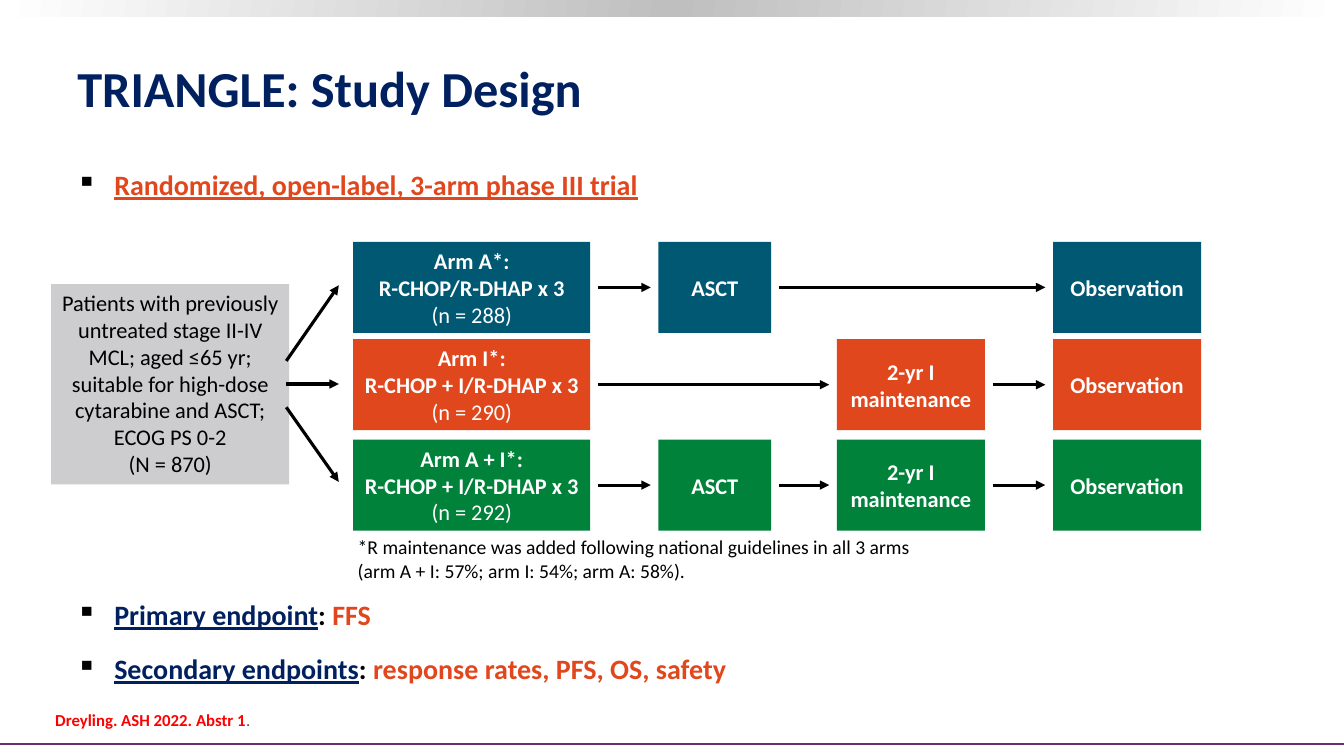
from copy import deepcopy
from pptx import Presentation
from pptx.util import Pt
from pptx.dml.color import RGBColor
from pptx.enum.shapes import MSO_SHAPE as Shape, MSO_CONNECTOR as Connector
from pptx.enum.text import MSO_ANCHOR as Anchor, PP_ALIGN as Align
from pptx.oxml.ns import qn
from lxml import etree


class Theme:
    font = "Calibri"
    navy, orange, teal, green = "002060", "E1471D", "015873", "00823B"
    black, white, gray, silver = "000000", "FFFFFF", "CDCDCF", "BFBFBF"
    red, slate, purple = "FF0000", "455560", "682E74"
    title, bullet, box, note, citation = 36, 20, 16, 14, 12


# Content: a run is (text, colour, style), style holding b (bold) and u (underline)
WIDTH, HEIGHT = 960, 540
TITLE = [[("TRIANGLE: Study Design", Theme.navy, "b")]]
TRIAL = [[("Randomized, open-label, 3-arm phase III trial", Theme.orange, "bu")]]
ENDPOINTS = [
    [(name, Theme.navy, "bu"), (": ", Theme.black, "b"), (value, Theme.orange, "b")]
    for name, value in [("Primary endpoint", "FFS"),
                        ("Secondary endpoints", "response rates, PFS, OS, safety")]
]
PATIENTS = [
    [("Patients with previously untreated stage II-IV MCL; aged ≤65 yr; suitable for "
      "high-dose cytarabine and ASCT; ECOG PS 0-2", Theme.black, "")],
    [("(N = 870)", Theme.black, "")],
]
FOOTNOTE = [[("*R maintenance was added following national guidelines in all 3 arms "
              "(arm A + I: 57%; arm I: 54%; arm A: 58%).", Theme.black, "")]]
CITATION = [[("Dreyling. ASH 2022. Abstr 1", Theme.red, "b"), (".", Theme.slate, "")]]

STEPS = {"ASCT": ["ASCT"], "Maintenance": ["2-yr I", "maintenance"],
         "Observation": ["Observation"]}
# Arm: top, colour, name, treatment, patients, later steps
ARMS = [
    (172.8, Theme.teal, "Arm A*:", "R-CHOP/R-DHAP x 3", "(n = 288)",
     ["ASCT", "Observation"]),
    (242.3, Theme.orange, "Arm I*:", "R-CHOP + I/R-DHAP x 3", "(n = 290)",
     ["Maintenance", "Observation"]),
    (314, Theme.green, "Arm A + I*:", "R-CHOP + I/R-DHAP x 3", "(n = 292)",
     ["ASCT", "Maintenance", "Observation"]),
]
COLUMNS = {"Arm": (252.3, 169.3), "ASCT": (470.3, 80.6),
           "Maintenance": (597.8, 105.8), "Observation": (752.2, 105.8)}
BOX_HEIGHT, GAP = 65, 5.5

presentation = Presentation()
presentation.slide_width, presentation.slide_height = Pt(WIDTH), Pt(HEIGHT)
slide = presentation.slides.add_slide(presentation.slide_layouts[6])


def color(value):
    return RGBColor.from_string(value)


def write(shape, paragraphs, size, align=Align.LEFT, anchor=Anchor.TOP, bullets=False):
    frame = shape.text_frame
    frame.word_wrap = True
    frame.vertical_anchor = anchor
    for index, runs in enumerate(paragraphs):
        paragraph = frame.paragraphs[0] if index == 0 else frame.add_paragraph()
        paragraph.alignment = align
        if bullets:
            add_bullet(paragraph)
            paragraph.line_spacing = 0.9
            paragraph.space_before = Pt(10 if index else 0)
            paragraph.space_after = Pt(7)
        for text, tint, style in runs:
            run = paragraph.add_run()
            run.text = text
            run.font.name, run.font.size = Theme.font, Pt(size)
            run.font.color.rgb = color(tint)
            run.font.bold, run.font.underline = "b" in style, "u" in style


def add_bullet(paragraph):
    properties = paragraph._p.get_or_add_pPr()
    properties.set("marL", str(Pt(27)))
    properties.set("indent", str(-Pt(27)))
    bullet_color = etree.SubElement(properties, qn("a:buClr"))
    etree.SubElement(bullet_color, qn("a:srgbClr"), val=Theme.black)
    etree.SubElement(properties, qn("a:buChar"), char="▪")


def add_text(left, top, width, height, paragraphs, size, **layout):
    box = slide.shapes.add_textbox(Pt(left), Pt(top), Pt(width), Pt(height))
    write(box, paragraphs, size, **layout)


def add_box(left, top, width, height, fill):
    box = slide.shapes.add_shape(Shape.RECTANGLE, Pt(left), Pt(top), Pt(width), Pt(height))
    box.shadow.inherit = False
    box.line.fill.background()
    box.fill.solid()
    box.fill.fore_color.rgb = color(fill)
    return box


def add_line(x1, y1, x2, y2, tint=Theme.black, weight=2.25, arrow=True):
    line = slide.shapes.add_connector(Connector.STRAIGHT, Pt(x1), Pt(y1), Pt(x2), Pt(y2))
    line.line.color.rgb = color(tint)
    line.line.width = Pt(weight)
    if arrow:
        etree.SubElement(line.line._get_or_add_ln(), qn("a:tailEnd"), type="triangle")
    etree.SubElement(line._element.spPr, qn("a:effectLst"))


# Top gradient band and bottom rule
band = add_box(0, 0, WIDTH, 11.5, Theme.silver)
band.fill.gradient()
band.fill.gradient_angle = 170
stop_list = band._element.spPr.find(".//" + qn("a:gsLst"))
stop_list.append(deepcopy(stop_list[-1]))
tints = [Theme.white, Theme.silver, Theme.white]
for stop, position, tint in zip(band.fill.gradient_stops, (0, 0.5, 1), tints):
    stop.position = position
    stop.color.rgb = color(tint)
add_line(0, 531.4, WIDTH, 531.4, Theme.purple, 1.5, arrow=False)

# Title, bullets and notes
add_text(48.2, 18.7, 856, 87, TITLE, Theme.title, anchor=Anchor.MIDDLE)
add_text(47.5, 118.8, 857, 40, TRIAL, Theme.bullet, bullets=True)
add_text(47.5, 426.2, 564, 75, ENDPOINTS, Theme.bullet, bullets=True)
add_text(248.4, 378.7, 428, 41, FOOTNOTE, Theme.note)
add_text(32.4, 503.3, 618, 21.6, CITATION, Theme.citation, anchor=Anchor.BOTTOM)

# Patients and the three-way split
patients = add_box(36.6, 203, 170, 143, Theme.gray)
write(patients, PATIENTS, Theme.box, Align.CENTER)
for start, end in [(257.8, 203.8), (274.3, 274.3), (290.9, 344.2)]:
    add_line(204.5, start, 242, end)

# One row per arm, with arrows across the gaps between its boxes
for top, fill, name, treatment, patient_count, steps in ARMS:
    arm_text = [[(name, Theme.white, "b")], [(treatment, Theme.white, "b")],
                [(patient_count, Theme.white, "")]]
    row = [("Arm", arm_text)]
    row += [(step, [[(text, Theme.white, "b")] for text in STEPS[step]]) for step in steps]
    previous_right = None
    for column, paragraphs in row:
        left, width = COLUMNS[column]
        box = add_box(left, top, width, BOX_HEIGHT, fill)
        box.text_frame.margin_left = box.text_frame.margin_right = Pt(3)
        write(box, paragraphs, Theme.box, Align.CENTER, Anchor.MIDDLE)
        if previous_right is not None:
            middle = top + BOX_HEIGHT / 2
            add_line(previous_right + GAP, middle, left - GAP, middle)
        previous_right = left + width

presentation.save("out.pptx")
